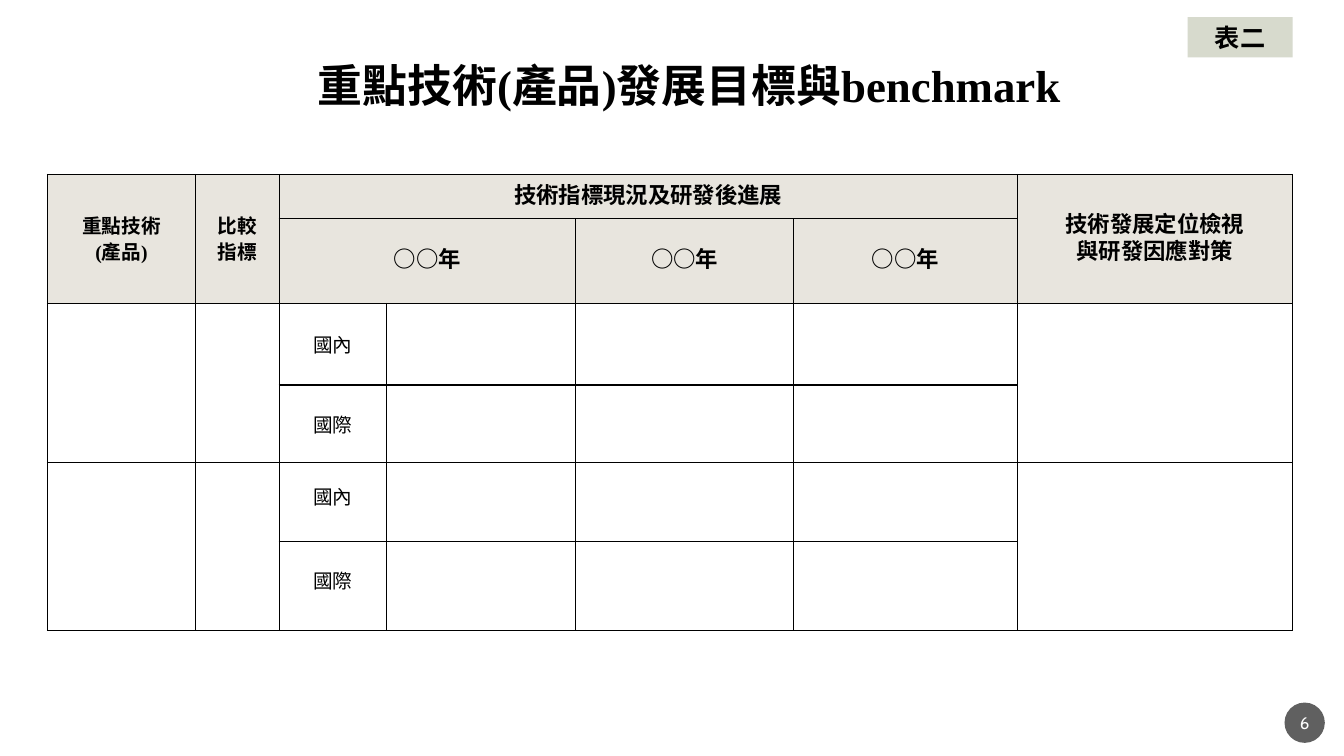
from dataclasses import dataclass

from lxml import etree
from pptx import Presentation
from pptx.dml.color import RGBColor
from pptx.enum.shapes import MSO_SHAPE
from pptx.enum.text import MSO_ANCHOR, PP_ALIGN
from pptx.oxml.ns import qn
from pptx.slide import Slide
from pptx.table import Table, _Cell
from pptx.text.text import TextFrame
from pptx.util import Inches, Pt

OVAL = MSO_SHAPE.OVAL
RECT = MSO_SHAPE.RECTANGLE
MIDDLE = MSO_ANCHOR.MIDDLE
TOP = MSO_ANCHOR.TOP
CENTER = PP_ALIGN.CENTER

COLORS = {
    "ink": "000000",
    "white": "FFFFFF",
    "head": "E8E5DE",
    "tag": "D7DACD",
    "badge": "1D1D1D",
}
SERIF = "Times New Roman"
SANS = "Cabin"
COLS = [1.47, 0.83, 1.06, 1.88, 2.16, 2.22, 2.73]
ROWS = [0.44, 0.84, 0.81, 0.77, 0.78, 0.89]


@dataclass(frozen=True)
class Style:
    size: float
    font: str = SERIF
    color: str = "ink"
    bold: bool = True
    pitch: float | None = None


@dataclass(frozen=True)
class Label:
    row: int
    col: int
    lines: tuple[str, ...]
    style: Style


@dataclass(frozen=True)
class Span:
    row: int
    col: int
    down: int
    across: int


@dataclass(frozen=True)
class Box:
    left: float
    top: float
    width: float
    height: float
    text: str
    style: Style
    shape: MSO_SHAPE | None = None
    fill: str = "white"
    alpha: int = 100
    inset: float = 0.1
    anchor: MSO_ANCHOR = TOP


SMALL = Style(14, pitch=19)
LARGE = Style(16, pitch=19)
YEAR = ("○○年",)

LABELS = [
    Label(0, 0, ("重點技術", "(產品)"), SMALL),
    Label(0, 1, ("比較", "指標"), SMALL),
    Label(0, 2, ("技術指標現況及研發後進展",), LARGE),
    Label(0, 6, ("技術發展定位檢視", "與研發因應對策"), LARGE),
    *(Label(1, col, YEAR, LARGE) for col in (2, 4, 5)),
    Label(2, 2, ("國內",), Style(14, bold=False, pitch=20)),
    Label(3, 2, ("國際",), Style(14, bold=False)),
    Label(4, 2, ("國內",), Style(14, bold=False, pitch=12)),
    Label(5, 2, ("國際",), Style(14, bold=False, pitch=12)),
]

SPANS = [
    *(Span(row, col, 2, 1) for row in (0, 2, 4) for col in (0, 1, 6)),
    Span(0, 2, 1, 4),
    Span(1, 2, 1, 2),
]

BOXES = [
    Box(12.74, 6.97, 0.4, 0.4, "6", Style(12, SANS, "white", False),
        OVAL, "badge", 70, 0.02, MIDDLE),
    Box(3.02, 0.52, 7.63, 0.64, "重點技術(產品)發展目標與benchmark", Style(32)),
    Box(11.78, 0.17, 1.04, 0.4, "表二", Style(18, SANS), RECT, "tag"),
]


def paint(name: str) -> RGBColor:
    return RGBColor.from_string(COLORS[name])


def write(frame: TextFrame, lines: tuple[str, ...], style: Style) -> None:
    for index, line in enumerate(lines):
        para = frame.add_paragraph() if index else frame.paragraphs[0]
        para.alignment = CENTER
        if style.pitch:
            para.line_spacing = Pt(style.pitch)
        run = para.add_run()
        run.text = line
        run.font.size = Pt(style.size)
        run.font.name = style.font
        run.font.bold = style.bold
        run.font.color.rgb = paint(style.color)


def draw_box(slide: Slide, box: Box) -> None:
    place = [Inches(n) for n in (box.left, box.top, box.width, box.height)]
    if box.shape is None:
        shape = slide.shapes.add_textbox(*place)
    else:
        shape = slide.shapes.add_shape(box.shape, *place)
        shape.shadow.inherit = False
        shape.line.fill.background()
        shape.fill.solid()
        shape.fill.fore_color.rgb = paint(box.fill)
        if box.alpha < 100:
            color = shape.fill._xPr.find(".//" + qn("a:srgbClr"))
            etree.SubElement(color, qn("a:alpha"), val=str(box.alpha * 1000))
    frame = shape.text_frame
    frame.word_wrap = True
    frame.vertical_anchor = box.anchor
    frame.margin_left = frame.margin_right = Inches(box.inset)
    write(frame, (box.text,), box.style)


def edge(cell: _Cell) -> None:
    props = cell._tc.get_or_add_tcPr()
    for side in ("lnL", "lnR", "lnT", "lnB"):
        line = etree.SubElement(props, qn("a:" + side), w=str(Pt(1)))
        fill = etree.SubElement(line, qn("a:solidFill"))
        etree.SubElement(fill, qn("a:srgbClr"), val=COLORS["ink"])


def dress(cell: _Cell, head: bool) -> None:
    edge(cell)
    cell.vertical_anchor = MIDDLE
    cell.margin_left = cell.margin_right = Inches(0.02)
    cell.margin_top = cell.margin_bottom = 0
    if head:
        cell.fill.solid()
        cell.fill.fore_color.rgb = paint("head")
    else:
        cell.fill.background()


def draw_grid(slide: Slide) -> None:
    place = [Inches(n) for n in (0.47, 1.73, sum(COLS), sum(ROWS))]
    grid: Table = slide.shapes.add_table(len(ROWS), len(COLS), *place).table
    grid.first_row = grid.horz_banding = False
    for col, width in zip(grid.columns, COLS):
        col.width = Inches(width)
    for index, (row, height) in enumerate(zip(grid.rows, ROWS)):
        row.height = Inches(height)
        for cell in row.cells:
            dress(cell, index < 2)
    for span in SPANS:
        last = grid.cell(span.row + span.down - 1, span.col + span.across - 1)
        grid.cell(span.row, span.col).merge(last)
    for label in LABELS:
        frame = grid.cell(label.row, label.col).text_frame
        write(frame, label.lines, label.style)


def main() -> None:
    deck = Presentation()
    deck.slide_width = Inches(13.33)
    deck.slide_height = Inches(7.5)
    slide = deck.slides.add_slide(deck.slide_layouts[6])
    draw_grid(slide)
    for box in BOXES:
        draw_box(slide, box)
    deck.save("out.pptx")


if __name__ == "__main__":
    main()
